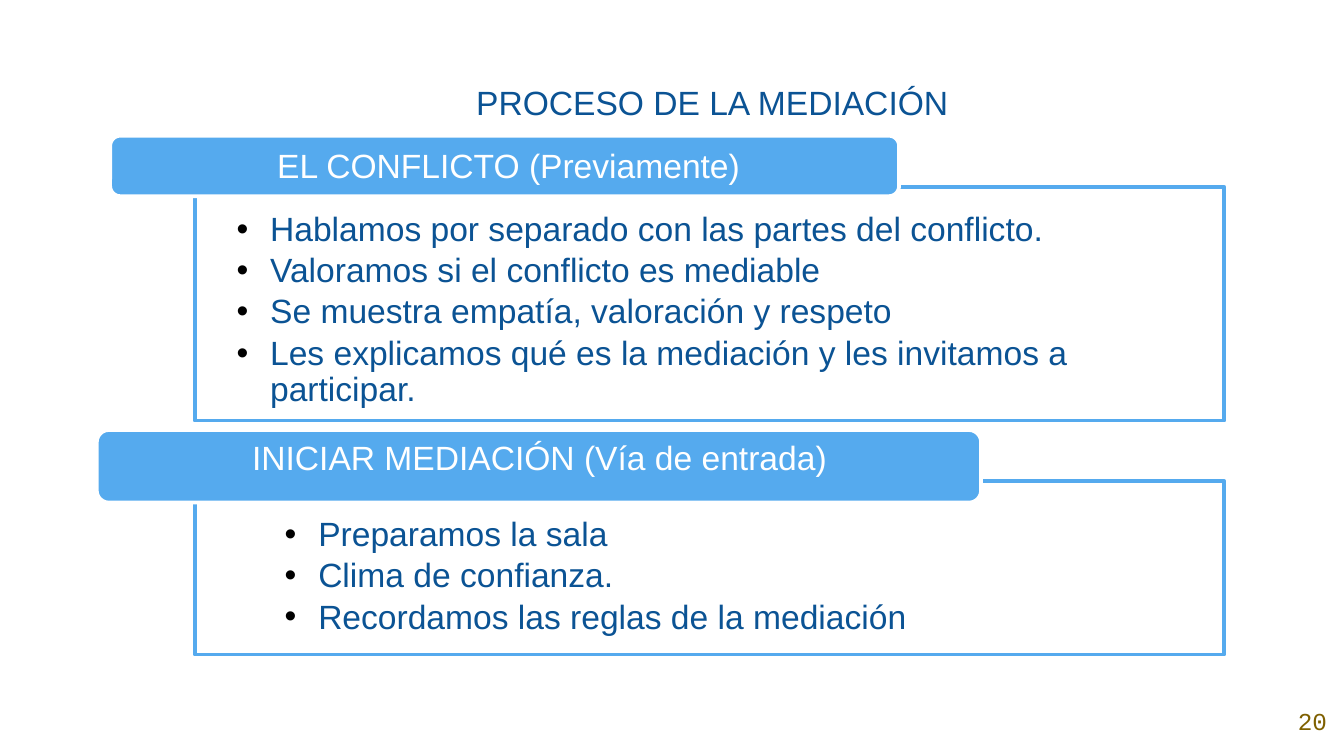
from lxml.etree import SubElement
from pptx import Presentation
from pptx.dml.color import RGBColor
from pptx.enum.shapes import MSO_SHAPE
from pptx.enum.text import MSO_ANCHOR, PP_ALIGN
from pptx.oxml.ns import qn
from pptx.util import Inches, Pt


def color(value):
    return RGBColor.from_string(value)


class SlideBuilder:
    accent = "55AAEE"
    text_color = "0B5394"
    white = "FFFFFF"
    size = 18
    font = "Arial"

    def __init__(self, slide):
        self.slide = slide

    def box(self, kind, place, fill, line, alpha=None):
        shape = self.slide.shapes.add_shape(kind, *map(Inches, place))
        shape.shadow.inherit = False
        shape.fill.solid()
        shape.fill.fore_color.rgb = color(fill)
        shape.line.color.rgb = color(line)
        shape.line.width = Pt(2)
        if alpha:
            fill_color = shape.fill._xPr.find(qn("a:solidFill"))[0]
            SubElement(fill_color, qn("a:alpha"), val=str(alpha * 1000))

    def panel(self, place):
        self.box(MSO_SHAPE.RECTANGLE, place, self.white, self.accent, alpha=90)

    def text(self, place, lines, insets, spacing=None, after=None, indent=None,
             bullet=False, anchor=MSO_ANCHOR.TOP, align=PP_ALIGN.CENTER, **font):
        frame = self.slide.shapes.add_textbox(*map(Inches, place)).text_frame
        left, top, right, bottom = map(Inches, insets)
        frame_format = {
            "word_wrap": True, "vertical_anchor": anchor,
            "margin_left": left, "margin_top": top,
            "margin_right": right, "margin_bottom": bottom,
        }
        for name, value in frame_format.items():
            setattr(frame, name, value)
        for index, line in enumerate(lines):
            paragraph = frame.add_paragraph() if index else frame.paragraphs[0]
            properties = paragraph._p.get_or_add_pPr()
            if indent:
                properties.set("marL", str(Inches(indent)))
                properties.set("indent", str(Inches(-0.25)))
            if after:
                space = SubElement(properties, qn("a:spcAft"))
                SubElement(space, qn("a:spcPct"), val=str(after * 1000))
            if bullet:
                paragraph.level = 1
                bullet_color = SubElement(properties, qn("a:buClr"))
                SubElement(bullet_color, qn("a:srgbClr"), val="000000")
                SubElement(properties, qn("a:buFont"), typeface=self.font)
                SubElement(properties, qn("a:buChar"), char="•")
            paragraph.alignment = align
            if spacing:
                paragraph.line_spacing = spacing
            run = paragraph.add_run()
            run.text = line
            run.font.color.rgb = color(font.get("color", self.text_color))
            font_format = {
                "name": font.get("name", self.font),
                "size": Pt(font.get("size", self.size)),
            }
            for name, value in font_format.items():
                setattr(run.font, name, value)

    def bullets(self, place, lines, insets):
        self.text(place, lines, insets, spacing=0.9, after=15, indent=0.25,
                  bullet=True, align=PP_ALIGN.LEFT)

    def heading(self, place, text_place, text):
        self.box(MSO_SHAPE.ROUNDED_RECTANGLE, place, self.accent, self.white)
        self.text(text_place, [text], (0.25, 0, 0.25, 0), spacing=0.9, after=35,
                  anchor=MSO_ANCHOR.MIDDLE, color=self.white)


def main():
    presentation = Presentation()
    presentation.slide_width = Inches(10)
    presentation.slide_height = Inches(10 * 9 / 16)
    builder = SlideBuilder(presentation.slides.add_slide(presentation.slide_layouts[6]))
    even_insets = (0.1, 0.1, 0.1, 0.1)

    builder.panel((1.45, 3.58, 7.66, 1.29))
    builder.text((1.02, 0.49, 8.31, 0.57), ["PROCESO DE LA MEDIACIÓN"],
                 even_insets, spacing=1.06, indent=0.5)
    builder.text((9.53, 5.11, 0.47, 0.51), ["20"], even_insets,
                 anchor=MSO_ANCHOR.MIDDLE, name="Courier New", size=13, color="7F6000")

    builder.panel((1.45, 1.39, 7.66, 1.74))
    builder.bullets((1.03, 1.12, 8.51, 1.97), [
        "Hablamos por separado con las partes del conflicto.",
        "Valoramos si el conflicto es mediable",
        "Se muestra empatía, valoración y respeto",
        "Les explicamos qué es la mediación y les invitamos a participar.",
    ], (0.73, 0.46, 0.73, 0.16))
    builder.heading((0.82, 1.01, 5.87, 0.45), (0.87, 1.13, 5.83, 0.23),
                    "EL CONFLICTO (Previamente)")

    builder.heading((0.72, 3.2, 6.58, 0.54), (0.79, 3.3, 6.45, 0.24),
                    "INICIAR MEDIACIÓN (Vía de entrada)")
    builder.bullets((2.02, 3.8, 5, 1.02), [
        "Preparamos la sala",
        "Clima de confianza.",
        "Recordamos las reglas de la mediación",
    ], (0.1, 0.05, 0.1, 0.05))

    presentation.save("out.pptx")


if __name__ == "__main__":
    main()
